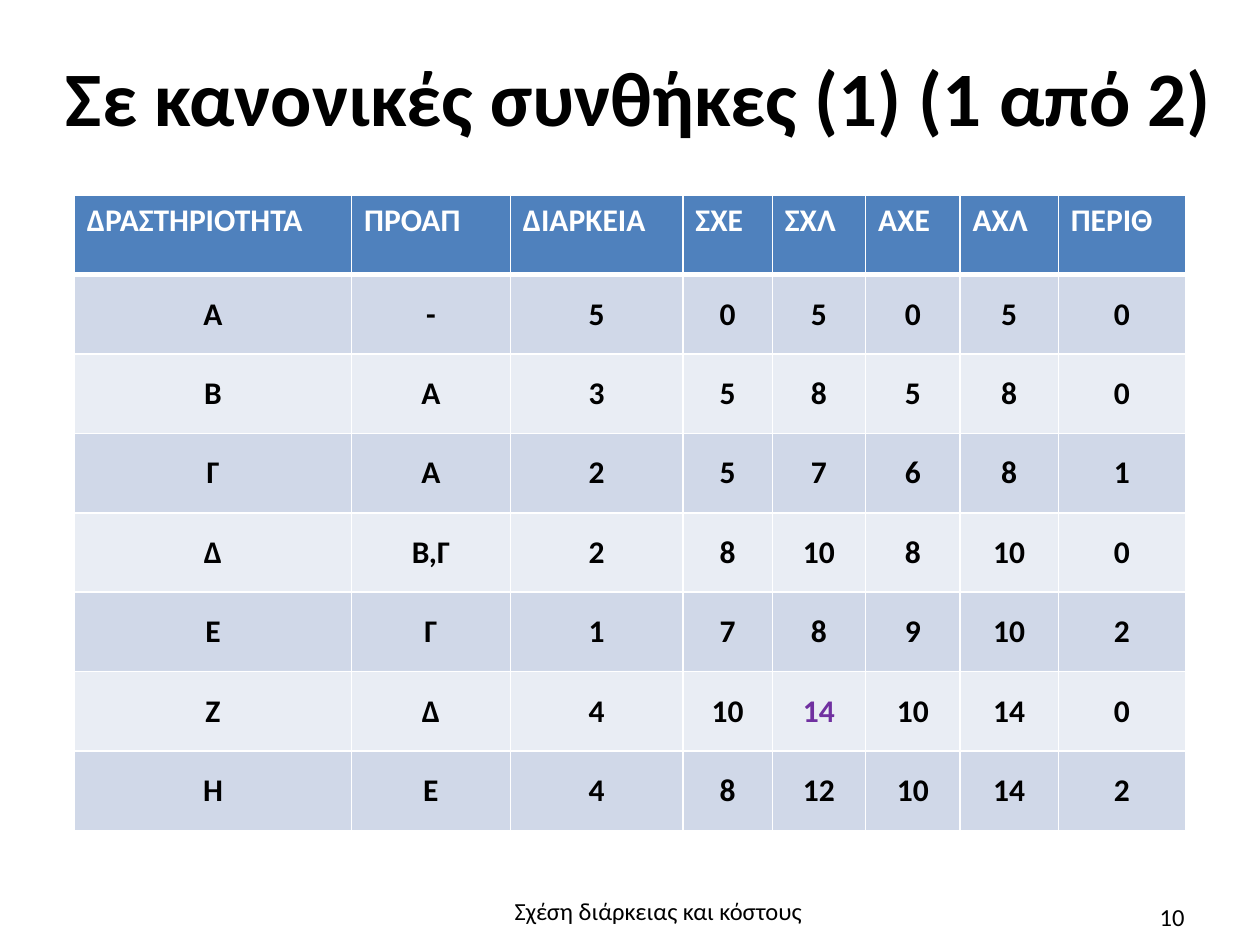
from lxml import etree
from pptx import Presentation
from pptx.dml.color import RGBColor
from pptx.enum.text import MSO_ANCHOR, PP_ALIGN
from pptx.oxml.ns import qn
from pptx.util import Inches, Pt

LEFT, CENTER, RIGHT = PP_ALIGN.LEFT, PP_ALIGN.CENTER, PP_ALIGN.RIGHT
TOP, MIDDLE = MSO_ANCHOR.TOP, MSO_ANCHOR.MIDDLE

BLACK = RGBColor(0x00, 0x00, 0x00)
WHITE = RGBColor(0xFF, 0xFF, 0xFF)
PURPLE = RGBColor(0x70, 0x30, 0xA0)
HEADER_BLUE = RGBColor(0x4F, 0x81, 0xBD)
BAND_DARK = RGBColor(0xD0, 0xD8, 0xE8)
BAND_LIGHT = RGBColor(0xE9, 0xED, 0xF4)

FONT = "Calibri"
COLUMN_WIDTHS = [2.2, 1.26, 1.37, 0.71, 0.74, 0.75, 0.78, 1.01]
ROW_HEIGHT = 0.63
ACTIVITIES = [
    ["ΔΡΑΣΤΗΡΙΟΤΗΤΑ", "ΠΡΟΑΠ", "ΔΙΑΡΚΕΙΑ", "ΣΧΕ", "ΣΧΛ", "ΑΧΕ", "ΑΧΛ", "ΠΕΡΙΘ"],
    ["Α", "-", "5", "0", "5", "0", "5", "0"],
    ["Β", "Α", "3", "5", "8", "5", "8", "0"],
    ["Γ", "Α", "2", "5", "7", "6", "8", "1"],
    ["Δ", "Β,Γ", "2", "8", "10", "8", "10", "0"],
    ["Ε", "Γ", "1", "7", "8", "9", "10", "2"],
    ["Ζ", "Δ", "4", "10", "14", "10", "14", "0"],
    ["Η", "Ε", "4", "8", "12", "10", "14", "2"],
]
HIGHLIGHT = (6, 4)  # row and column of the finish time in purple


def write_text(frame, text, size=18, color=BLACK, bold=False, align=LEFT,
               line_spacing=None):
    para = frame.paragraphs[0]
    para.alignment = align
    if line_spacing:
        para.line_spacing = line_spacing
    span = para.add_run()
    span.text = text
    span.font.name = FONT
    span.font.size = Pt(size)
    span.font.bold = bold
    span.font.color.rgb = color


def add_text_box(page, box, text, anchor=TOP, **text_format):
    frame = page.shapes.add_textbox(*map(Inches, box)).text_frame
    frame.word_wrap = True
    frame.vertical_anchor = anchor
    write_text(frame, text, **text_format)
    return frame


def set_borders(cell, top=1, bottom=1):
    properties = cell._tc.get_or_add_tcPr()
    for side, width in (("L", 1), ("R", 1), ("T", top), ("B", bottom)):
        line = etree.SubElement(properties, qn(f"a:ln{side}"), w=str(Pt(width)))
        fill = etree.SubElement(line, qn("a:solidFill"))
        etree.SubElement(fill, qn("a:srgbClr"), val=str(WHITE))


def add_title(page, box):
    frame = add_text_box(page, box, "Σε κανονικές συνθήκες (1) (1 από 2)",
                         anchor=MIDDLE, size=44, bold=True, align=CENTER,
                         line_spacing=0.98)
    frame.margin_left = frame.margin_right = frame.margin_bottom = 0
    frame.margin_top = Inches(0.02)


def add_activity_table(page, box):
    table = page.shapes.add_table(len(ACTIVITIES), len(COLUMN_WIDTHS),
                                  *map(Inches, box)).table
    for column, width in zip(table.columns, COLUMN_WIDTHS):
        column.width = Inches(width)
    for row_index, values in enumerate(ACTIVITIES):
        table.rows[row_index].height = Inches(ROW_HEIGHT)
        is_header = row_index == 0
        band = BAND_DARK if row_index % 2 else BAND_LIGHT
        for column_index, value in enumerate(values):
            cell = table.cell(row_index, column_index)
            # The rule under the header is thicker than the rest
            set_borders(cell, top=3 if row_index == 1 else 1,
                        bottom=3 if is_header else 1)
            cell.fill.solid()
            cell.fill.fore_color.rgb = HEADER_BLUE if is_header else band
            cell.vertical_anchor = TOP if is_header else MIDDLE
            if is_header:
                color = WHITE
            else:
                color = PURPLE if (row_index, column_index) == HIGHLIGHT else BLACK
            write_text(cell.text_frame, value, color=color, bold=True,
                       align=LEFT if is_header else CENTER)


def add_footer(page, caption_box, number_box):
    add_text_box(page, caption_box, "Σχέση διάρκειας και κόστους",
                 size=14, align=CENTER)
    add_text_box(page, number_box, "10", size=14, align=RIGHT)


def main():
    deck = Presentation()
    deck.slide_width, deck.slide_height = Inches(10), Inches(7.5)
    page = deck.slides.add_slide(deck.slide_layouts[6])
    add_title(page, (0.51, 0.09, 9.13, 1.38))
    add_activity_table(page, (0.59, 1.55, sum(COLUMN_WIDTHS),
                              ROW_HEIGHT * len(ACTIVITIES)))
    add_footer(page, (3.48, 7.06, 3.49, 0.55), (7.17, 7.11, 2.33, 0.4))
    deck.save("out.pptx")


if __name__ == "__main__":
    main()
